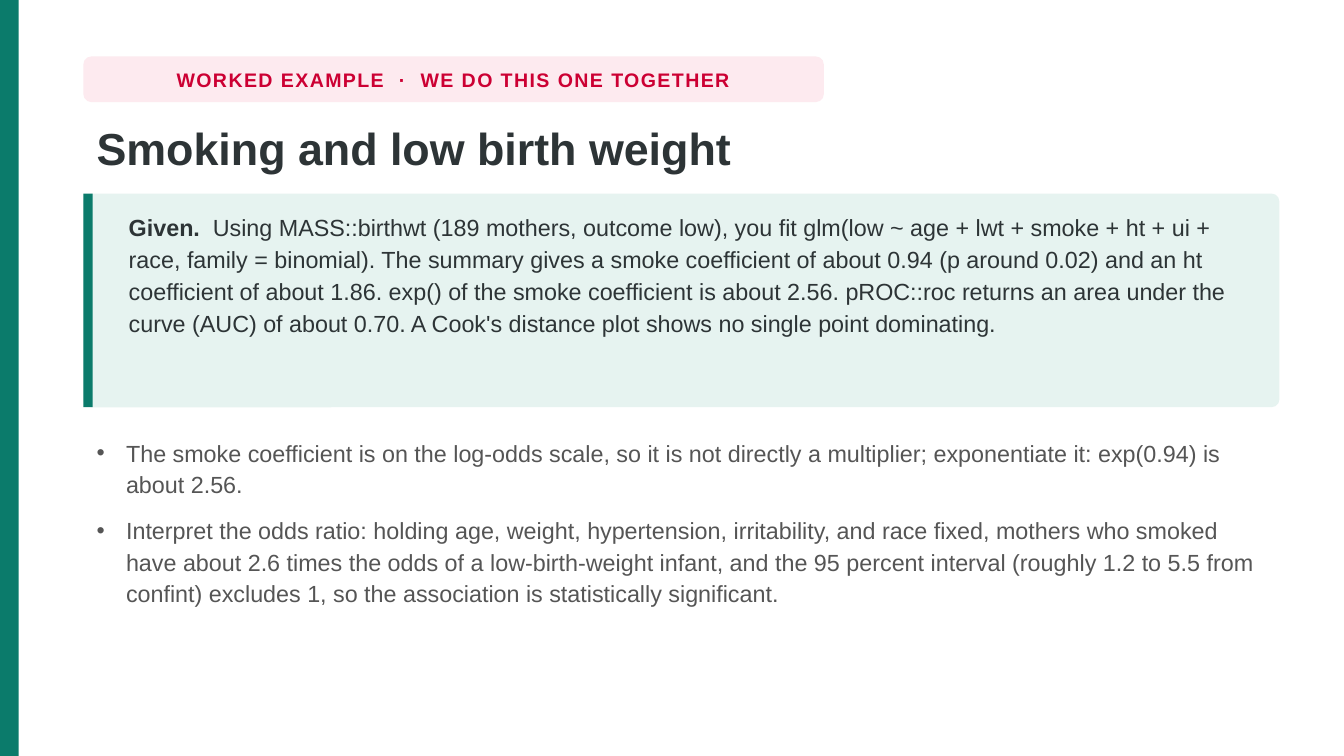
from lxml.etree import SubElement
from pptx import Presentation
from pptx.dml.color import RGBColor
from pptx.enum.shapes import MSO_SHAPE as SHAPE
from pptx.enum.text import MSO_ANCHOR as ANCHOR, PP_ALIGN as ALIGN
from pptx.oxml.ns import qn
from pptx.util import Inches, Pt

COLORS = {
    "green": "0B7B6B",
    "mint": "E6F3F0",
    "pink": "FDEAEF",
    "red": "CC0033",
    "ink": "2D3436",
    "gray": "555555",
}
FONT = "Arial"
BODY_SIZE = 12.5
SLIDE_WIDTH = 10
SLIDE_HEIGHT = SLIDE_WIDTH * 9 / 16
LEFT, WIDTH = 0.62, 8.9
CORNER = 0.06

TAG = "WORKED EXAMPLE  ·  WE DO THIS ONE TOGETHER"
TITLE = "Smoking and low birth weight"
GIVEN = (
    "Using MASS::birthwt (189 mothers, outcome low), you fit "
    "glm(low ~ age + lwt + smoke + ht + ui + race, family = binomial). "
    "The summary gives a smoke coefficient of about 0.94 (p around 0.02) "
    "and an ht coefficient of about 1.86. exp() of the smoke coefficient is "
    "about 2.56. pROC::roc returns an area under the curve (AUC) of about "
    "0.70. A Cook's distance plot shows no single point dominating."
)
POINTS = [
    (0.49, "The smoke coefficient is on the log-odds scale, so it is not "
           "directly a multiplier; exponentiate it: exp(0.94) is about 2.56."),
    (0.93, "Interpret the odds ratio: holding age, weight, hypertension, "
           "irritability, and race fixed, mothers who smoked have about 2.6 "
           "times the odds of a low-birth-weight infant, and the 95 percent "
           "interval (roughly 1.2 to 5.5 from confint) excludes 1, so the "
           "association is statistically significant."),
]
POINT_GAP = 0.09


def add_block(slide, left, top, width, height, color, corner=0):
    kind = SHAPE.ROUNDED_RECTANGLE if corner else SHAPE.RECTANGLE
    block = slide.shapes.add_shape(
        kind, Inches(left), Inches(top), Inches(width), Inches(height))
    if corner:
        block.adjustments[0] = corner / min(width, height)
    block.shadow.inherit = False
    block.fill.solid()
    block.fill.fore_color.rgb = RGBColor.from_string(COLORS[color])
    block.line.fill.background()


def add_text(slide, left, top, width, height, text, size, color,
             bold=None, spacing=None, bullet=False):
    """Add a one-paragraph text box and return its text frame."""
    frame = slide.shapes.add_textbox(
        Inches(left), Inches(top), Inches(width), Inches(height)).text_frame
    frame.word_wrap = True
    paragraph = frame.paragraphs[0]
    paragraph.add_run().text = text
    if spacing:
        paragraph.line_spacing = spacing
    if bullet:
        properties = paragraph._p.get_or_add_pPr()
        properties.set("marL", str(Inches(0.22)))
        properties.set("indent", str(-Inches(0.22)))
        SubElement(properties, qn("a:buFont")).set("typeface", FONT)
        SubElement(properties, qn("a:buChar")).set("char", "•")
    font = paragraph.font
    font.name, font.size, font.bold = FONT, Pt(size), bold
    font.color.rgb = RGBColor.from_string(COLORS[color])
    return frame


def add_tag(slide, left, top, width, height):
    add_block(slide, left, top, width, height, "pink", CORNER)
    frame = add_text(slide, left, top, width, height, TAG, 10.5, "red", bold=True)
    frame.word_wrap = False
    frame.vertical_anchor = ANCHOR.MIDDLE
    label = frame.paragraphs[0]
    label.alignment = ALIGN.CENTER
    label.runs[0].font._element.set("spc", "80")


def add_given(slide, left, top, width, height):
    add_block(slide, left, top, width, height, "mint", CORNER)
    add_block(slide, left, top, 0.07, height, "green")
    frame = add_text(slide, left + 0.24, top + 0.07, width - 0.5, height - 0.14,
                     "Given.  ", BODY_SIZE, "ink", spacing=1.14)
    statement = frame.paragraphs[0]
    statement.runs[0].font.bold = True
    statement.add_run().text = GIVEN


def add_points(slide, left, top, width):
    for height, point in POINTS:
        add_text(slide, left, top, width, height, point, BODY_SIZE, "gray",
                 spacing=1.12, bullet=True)
        top += height + POINT_GAP


def main():
    deck = Presentation()
    deck.slide_width = Inches(SLIDE_WIDTH)
    deck.slide_height = Inches(SLIDE_HEIGHT)
    slide = deck.slides.add_slide(deck.slide_layouts[6])
    add_block(slide, 0, 0, 0.14, SLIDE_HEIGHT, "green")
    add_tag(slide, LEFT, 0.42, 5.51, 0.34)
    add_text(slide, LEFT, 0.84, WIDTH, 0.56, TITLE, 24, "ink",
             bold=True, spacing=1.02)
    add_given(slide, LEFT, 1.44, WIDTH, 1.59)
    add_points(slide, LEFT, 3.19, WIDTH)
    deck.save("out.pptx")


if __name__ == "__main__":
    main()
